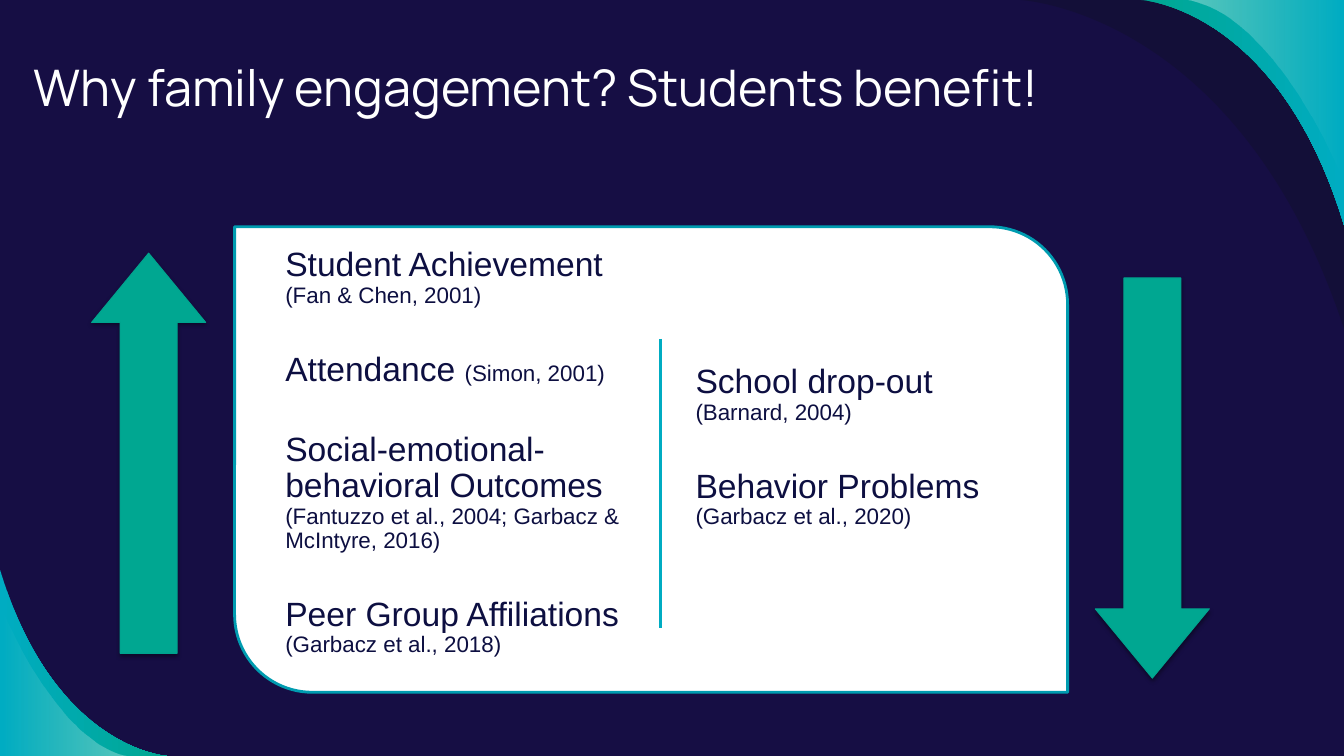
from lxml.etree import SubElement
from pptx import Presentation
from pptx.dml.color import RGBColor
from pptx.enum.shapes import MSO_CONNECTOR, MSO_SHAPE
from pptx.enum.text import MSO_ANCHOR, MSO_AUTO_SIZE, PP_ALIGN
from pptx.oxml.ns import qn
from pptx.util import Pt

COLORS = {
    "night": "160E44", "shade": "12102F", "cyan": "00ACC2", "teal": "00A791",
    "white": "FFFFFF", "edge": "009CB0", "rim": "00A38E", "ink": "0D0F41",
    "black": "000000",
}


def tint(name):
    return RGBColor.from_string(COLORS[name])


def place(shape, left, top, width, height):
    shape.left, shape.top = Pt(left), Pt(top)
    shape.width, shape.height = Pt(width), Pt(height)
    frame = shape.text_frame
    frame.word_wrap = True
    frame.auto_size = MSO_AUTO_SIZE.NONE
    frame.vertical_anchor = MSO_ANCHOR.TOP
    frame.margin_left = frame.margin_right = Pt(7.2)
    frame.margin_top = frame.margin_bottom = Pt(7.2)
    return frame


deck = Presentation()
deck.slide_width, deck.slide_height = Pt(960), Pt(540)
slide = deck.slides.add_slide(deck.slide_layouts[3])
slide.background.fill.solid()
slide.background.fill.fore_color.rgb = tint("night")
shapes = slide.shapes
title, gains, drops = list(slide.placeholders)

low, high = (0, 540), (960, 0)
swoops = [
    (low, [(119.5, 540), (119.5, 540), (38.9, 535.7), (0, 406.8)],
     [("cyan", 100), ("teal", 100)]),
    (low, [(0, 432.7), (0, 432.7), (40.3, 533.5), (95, 540)],
     [("white", 0), ("white", 36)]),
    (high, [(960, 234.7), (884.9, 7.2), (728.6, 0), (728.6, 0)],
     [("shade", 54)]),
    (high, [(815, 0), (815, 0), (913, 5), (960, 160.6)],
     [("teal", 100), ("cyan", 100)]),
    (high, [(960, 129.6), (960, 129.6), (911.5, 7.9), (845.3, 0)],
     [("white", 36), ("white", 0)]),
]
for corner, knots, stops in swoops:
    points = [(Pt(x), Pt(y)) for x, y in knots + [corner]]
    pen = shapes.build_freeform(*points[0])
    pen.add_line_segments(points[1:], close=True)
    swoop = pen.convert_to_shape()
    lines = list(swoop.element.spPr.iter(qn("a:lnTo")))[:3]
    curve = SubElement(lines[0].getparent(), qn("a:cubicBezTo"))
    lines[0].addprevious(curve)
    for line in lines:
        curve.append(line[0])
        line.getparent().remove(line)
    swoop.shadow.inherit = False
    swoop.line.fill.background()
    if len(stops) == 1:
        swoop.fill.solid()
        swoop.fill.fore_color.rgb = tint(stops[0][0])
    else:
        swoop.fill.gradient()
        swoop.fill.gradient_angle = 0
        for stop, (name, _) in zip(swoop.fill.gradient_stops, stops):
            stop.color.rgb = tint(name)
    for color, (_, alpha) in zip(swoop.element.spPr.iter(qn("a:srgbClr")), stops):
        if alpha < 100:
            SubElement(color, qn("a:alpha"), val=str(alpha * 1000))

card = shapes.add_shape(MSO_SHAPE.ROUND_2_DIAG_RECTANGLE,
                        Pt(167.6), Pt(162), Pt(595), Pt(332.5))
card.adjustments[0], card.adjustments[1] = 0, 0.167
card.shadow.inherit = False
card.fill.solid()
card.fill.fore_color.rgb = tint("white")
card.line.color.rgb = tint("edge")
card.line.width = Pt(2)

rule = shapes.add_connector(MSO_CONNECTOR.STRAIGHT,
                            Pt(471.8), Pt(242), Pt(471.8), Pt(448.5))
rule.line.color.rgb = tint("cyan")
rule.line.width = Pt(2)
SubElement(rule.element.spPr, qn("a:effectLst"))

for item in (title, gains, drops):
    item.element.getparent().append(item.element)

frame = place(title, 16.6, 36.7, 854.6, 66.2)
para = frame.paragraphs[0]
para.alignment = PP_ALIGN.LEFT
para.line_spacing = 0.93
run = para.add_run()
run.text = "Why family engagement? Students benefit!"
run.font.name, run.font.size = "Manrope", Pt(36)
run.font.color.rgb = tint("white")

lists = [
    (gains, (196.6, 169.8, 265, 221.8), [
        ("Student Achievement ", "(Fan & Chen, 2001)"),
        ("Attendance ", "(Simon, 2001)"),
        ("Social-emotional-behavioral Outcomes ",
         "(Fantuzzo et al., 2004; Garbacz & McIntyre, 2016)"),
        ("Peer Group Affiliations ", "(Garbacz et al., 2018)"),
    ]),
    (drops, (489.6, 253.2, 248.4, 113), [
        ("School drop-out ", "(Barnard, 2004)"),
        ("Behavior Problems ", "(Garbacz et al., 2020)"),
    ]),
]
for holder, box, rows in lists:
    frame = place(holder, *box)
    for index, row in enumerate(rows):
        para = frame.add_paragraph() if index else frame.paragraphs[0]
        props = para._p.get_or_add_pPr()
        props.set("marL", "0")
        props.set("indent", "0")
        SubElement(props, qn("a:buNone"))
        para.alignment = PP_ALIGN.LEFT
        para.line_spacing = 0.9
        para.space_before = Pt(0)
        para.space_after = Pt(31.4 if index < len(rows) - 1 else 0)
        for words, size in zip(row, (24, 16)):
            run = para.add_run()
            run.text = words
            run.font.name, run.font.size = "Arial", Pt(size)
            run.font.color.rgb = tint("ink")

for left, top, turn in ((-36.7, 283, 270), (680.2, 300.8, 90)):
    arrow = shapes.add_shape(MSO_SHAPE.RIGHT_ARROW,
                             Pt(left), Pt(top), Pt(285.8), Pt(81.4))
    arrow.rotation = turn
    arrow.adjustments[0], arrow.adjustments[1] = 0.498, 0.607
    arrow.fill.solid()
    arrow.fill.fore_color.rgb = tint("teal")
    arrow.line.color.rgb = tint("rim")
    arrow.line.width = Pt(0.75)
    arrow.shadow.inherit = False
    glow = SubElement(arrow.element.spPr.find(qn("a:effectLst")), qn("a:outerShdw"),
                      blurRad=str(Pt(3.1)), dist=str(Pt(1.6)),
                      dir="5400000", rotWithShape="0")
    dark = SubElement(glow, qn("a:srgbClr"), val=COLORS["black"])
    SubElement(dark, qn("a:alpha"), val="38000")

for item in list(slide.placeholders):
    if not item.text_frame.text:
        item.element.getparent().remove(item.element)

deck.save("out.pptx")
